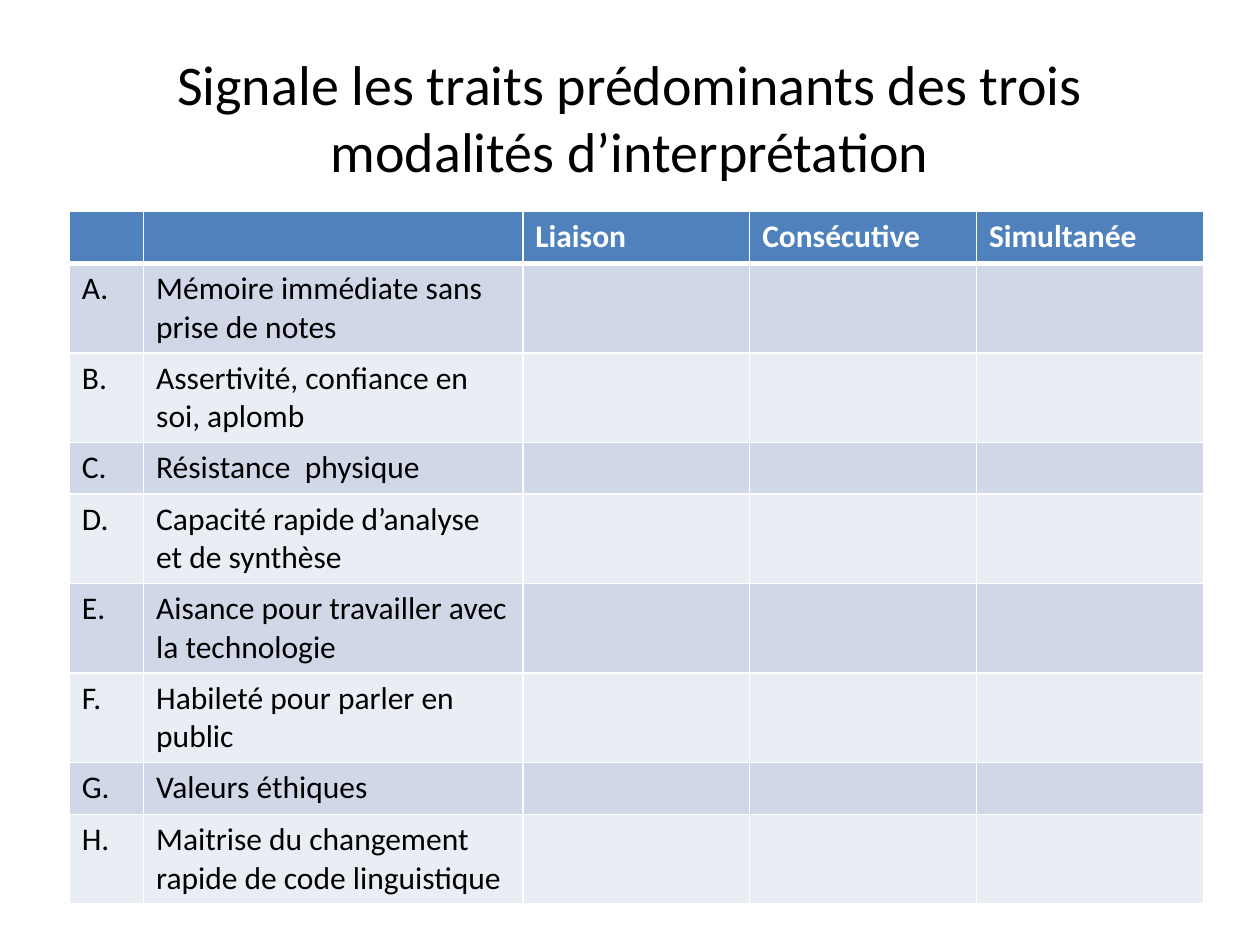
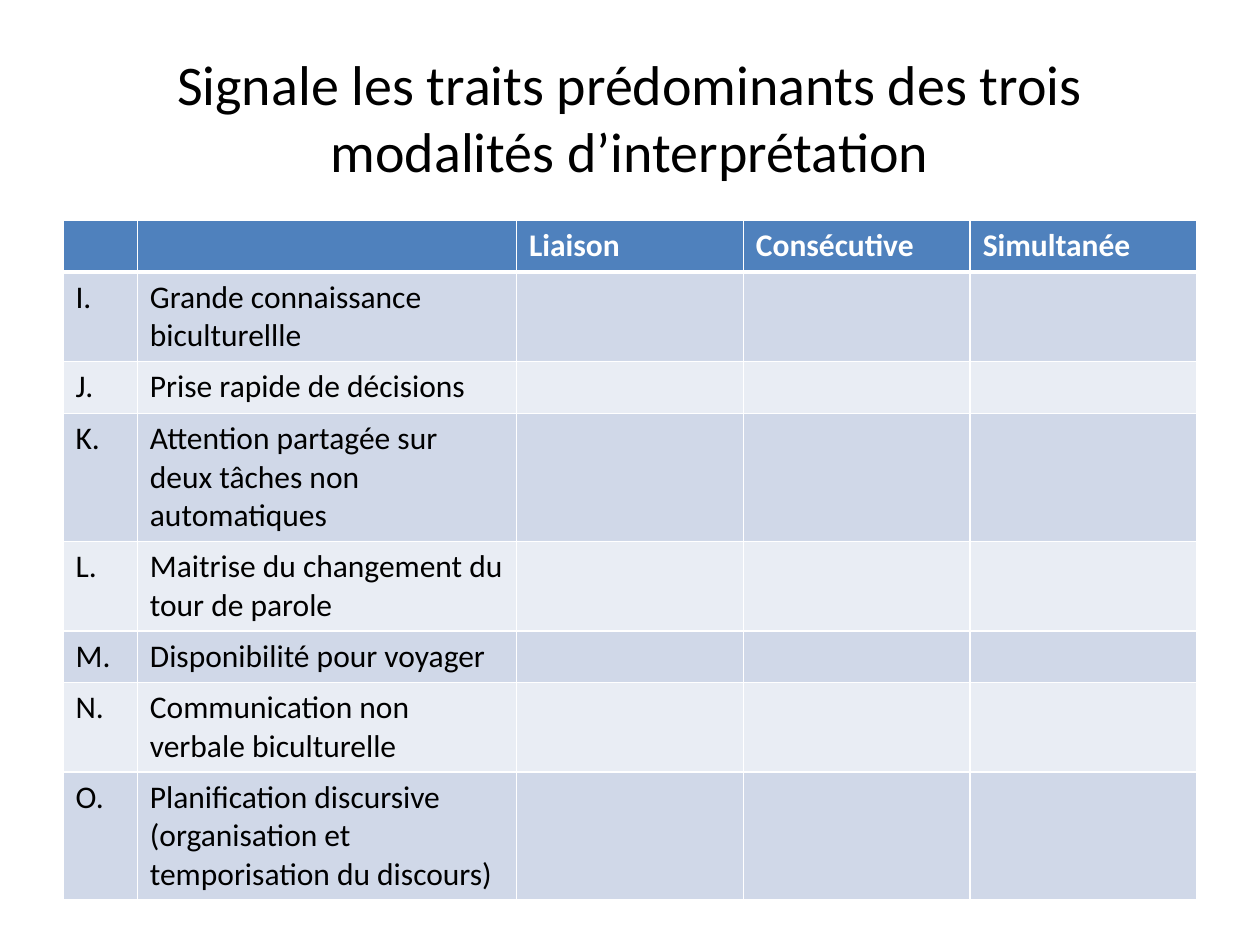
import dataclasses

import lxml.etree
import pptx
import pptx.dml.color
import pptx.enum.text
import pptx.oxml.ns
import pptx.util

Inches = pptx.util.Inches
Pt = pptx.util.Pt


@dataclasses.dataclass(frozen=True)
class Theme:
    font: str = "Calibri"
    title_size: int = 32
    table_size: int = 18
    text: str = "000000"
    light_text: str = "FFFFFF"
    header: str = "4F81BD"
    bands: tuple = ("D0D8E8", "E9EDF4")
    border: str = "FFFFFF"
    thin: int = 1
    thick: int = 3


THEME = Theme()
TITLE = "Signale les traits prédominants des trois modalités d’interprétation"
HEADERS = ["", "", "Liaison", "Consécutive", "Simultanée"]
COLUMN_WIDTHS = [0.59, 3.01, 1.8, 1.8, 1.8]
ROW_HEIGHT = 0.41
LETTERS = iter("ABCDEFGHIJKLMNO")

# Left and top of each slide's table, with the traits it lists
TRAIT_TABLES = [
    (0.55, 1.68, [
        "Mémoire immédiate sans prise de notes",
        "Assertivité, confiance en soi, aplomb",
        "Résistance  physique",
        "Capacité rapide d’analyse et de synthèse",
        "Aisance pour travailler avec la technologie",
        "Habileté pour parler en public",
        "Valeurs éthiques",
        "Maitrise du changement rapide de code linguistique",
    ]),
    (0.5, 1.75, [
        "Grande connaissance biculturellle",
        "Prise rapide de décisions",
        "Attention partagée sur deux tâches non automatiques",
        "Maitrise du changement du tour de parole",
        "Disponibilité pour voyager",
        "Communication non verbale biculturelle",
        "Planification discursive (organisation et temporisation du discours)",
    ]),
]


def format_runs(text_frame, size, color, bold=False):
    for paragraph in text_frame.paragraphs:
        for run in paragraph.runs:
            run.font.name = THEME.font
            run.font.size = Pt(size)
            run.font.bold = bold
            run.font.color.rgb = pptx.dml.color.RGBColor.from_string(color)


def set_borders(cell, top, bottom):
    properties = cell._tc.get_or_add_tcPr()
    qn = pptx.oxml.ns.qn
    widths = {"L": THEME.thin, "R": THEME.thin, "T": top, "B": bottom}
    for side, width in widths.items():
        line = lxml.etree.SubElement(properties, qn(f"a:ln{side}"), w=str(Pt(width)))
        fill = lxml.etree.SubElement(line, qn("a:solidFill"))
        lxml.etree.SubElement(fill, qn("a:srgbClr"), val=THEME.border)


presentation = pptx.Presentation()
presentation.slide_width = Inches(10)
presentation.slide_height = Inches(7.5)
title_only_layout = presentation.slide_layouts[5]

for left, top, traits in TRAIT_TABLES:
    slide = presentation.slides.add_slide(title_only_layout)

    title = slide.shapes.title
    title.left, title.top = Inches(0.5), Inches(0.3)
    title.width, title.height = Inches(9), Inches(1.25)
    title.text_frame.text = TITLE
    title.text_frame.vertical_anchor = pptx.enum.text.MSO_ANCHOR.MIDDLE
    title.text_frame.paragraphs[0].alignment = pptx.enum.text.PP_ALIGN.CENTER
    format_runs(title.text_frame, THEME.title_size, THEME.text)

    rows = [HEADERS] + [[f"{next(LETTERS)}.", trait, "", "", ""] for trait in traits]
    table = slide.shapes.add_table(
        len(rows), len(HEADERS), Inches(left), Inches(top),
        Inches(sum(COLUMN_WIDTHS)), Inches(ROW_HEIGHT * len(rows))).table
    for column, width in zip(table.columns, COLUMN_WIDTHS):
        column.width = Inches(width)

    for row_index, texts in enumerate(rows):
        table.rows[row_index].height = Inches(ROW_HEIGHT)
        is_header = row_index == 0
        background = THEME.header if is_header else THEME.bands[(row_index - 1) % 2]
        color = THEME.light_text if is_header else THEME.text
        top_border = THEME.thick if row_index == 1 else THEME.thin
        bottom_border = THEME.thick if is_header else THEME.thin
        for column_index, text in enumerate(texts):
            cell = table.cell(row_index, column_index)
            set_borders(cell, top_border, bottom_border)
            cell.fill.solid()
            cell.fill.fore_color.rgb = pptx.dml.color.RGBColor.from_string(background)
            if text:
                cell.text_frame.text = text
                format_runs(cell.text_frame, THEME.table_size, color, is_header)

presentation.save("out.pptx")
